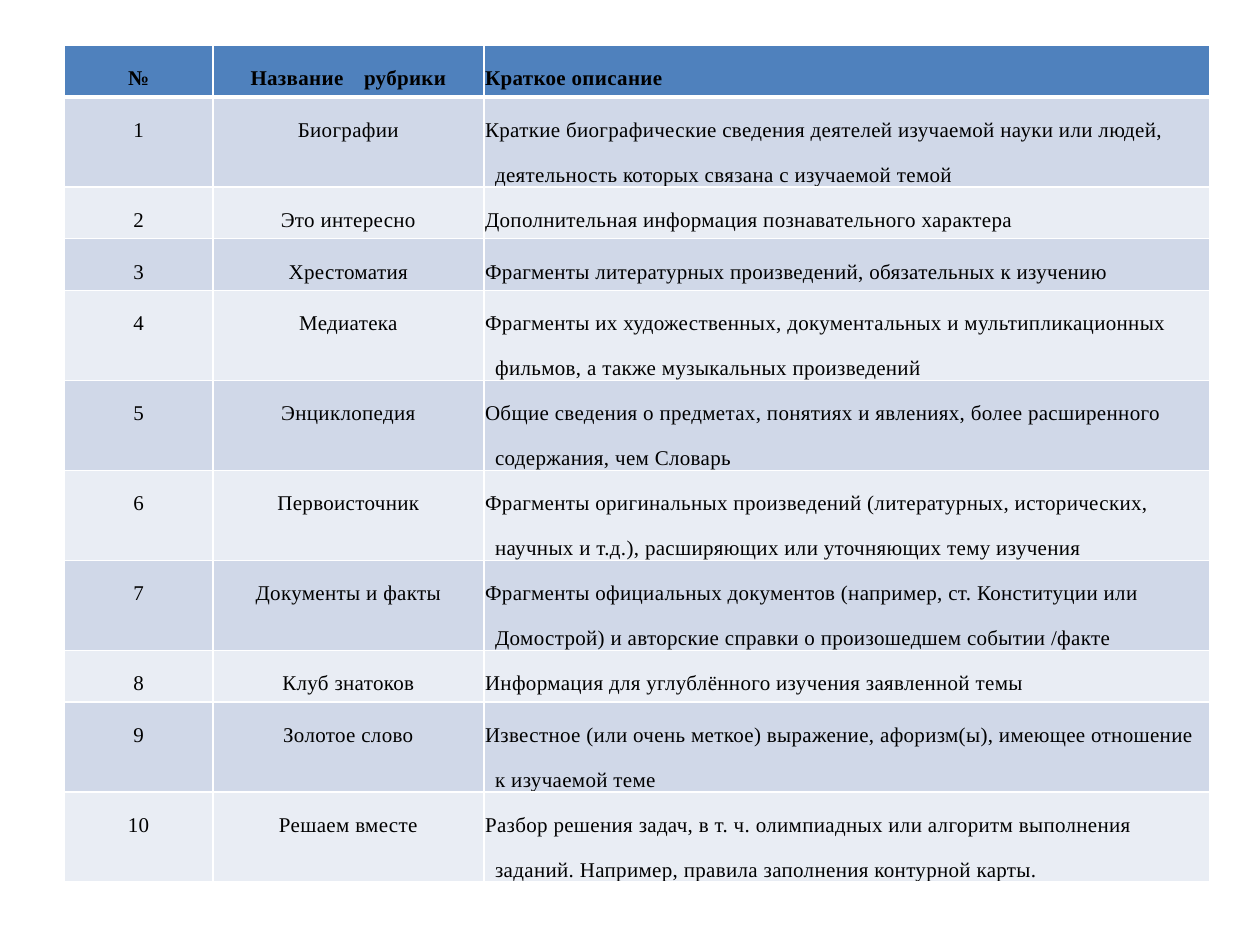
from lxml import etree
from pptx import Presentation
from pptx.dml.color import RGBColor
from pptx.enum.text import PP_ALIGN
from pptx.oxml.ns import qn
from pptx.util import Inches, Pt

CENTER, LEFT = PP_ALIGN.CENTER, PP_ALIGN.LEFT
COLORS = {"header": "4F81BD", "odd": "D0D8E8", "even": "E9EDF4",
          "text": "000000", "border": "FFFFFF"}
BODY_FONT, GAP_FONT = "Times New Roman", "Cabin"

HEADER = ("№", "Название рубрики", "Краткое описание")
RUBRICS = [
    ("Биографии", "Краткие биографические сведения деятелей изучаемой науки или людей, "
     "деятельность которых связана с изучаемой темой"),
    ("Это интересно", "Дополнительная информация познавательного характера"),
    ("Хрестоматия", "Фрагменты литературных произведений, обязательных к изучению"),
    ("Медиатека", "Фрагменты их художественных, документальных и мультипликационных "
     "фильмов, а также музыкальных произведений"),
    ("Энциклопедия", "Общие сведения о предметах, понятиях и явлениях, более расширенного "
     "содержания, чем Словарь"),
    ("Первоисточник", "Фрагменты оригинальных произведений (литературных, исторических, "
     "научных и т.д.), расширяющих или уточняющих тему изучения"),
    ("Документы и факты", "Фрагменты официальных документов (например, ст. Конституции или "
     "Домострой) и авторские справки о произошедшем событии /факте"),
    ("Клуб знатоков", "Информация для углублённого изучения заявленной темы"),
    ("Золотое слово", "Известное (или очень меткое) выражение, афоризм(ы), имеющее отношение "
     "к изучаемой теме"),
    ("Решаем вместе", "Разбор решения задач, в т. ч. олимпиадных или алгоритм выполнения "
     "заданий. Например, правила заполнения контурной карты."),
]
COLUMN_WIDTHS = (1.18, 2.15, 5.76)
ROW_HEIGHT = 0.41


def format_run(run, bold, font=BODY_FONT, size=12, spacing=20):
    run.font.name = font
    run.font.size = Pt(size)
    run.font.bold = bold
    run.font.color.rgb = RGBColor.from_string(COLORS["text"])
    run.font._element.set("spc", str(spacing))


def add_borders(cell, bottom_width, top_width):
    properties = cell._tc.get_or_add_tcPr()
    for side, width in (("L", 1), ("R", 1), ("T", top_width), ("B", bottom_width)):
        line = etree.SubElement(properties, qn(f"a:ln{side}"), w=str(Pt(width)))
        fill = etree.SubElement(line, qn("a:solidFill"))
        etree.SubElement(fill, qn("a:srgbClr"), val=COLORS["border"])


prs = Presentation()
prs.slide_width, prs.slide_height = Inches(10), Inches(7.5)
slide = prs.slides.add_slide(prs.slide_layouts[6])

# Table grid
rows = [HEADER] + [(str(number), *rubric) for number, rubric in enumerate(RUBRICS, 1)]
table = slide.shapes.add_table(
    len(rows), len(HEADER), Inches(0.51), Inches(0.36),
    Inches(sum(COLUMN_WIDTHS)), Inches(ROW_HEIGHT * len(rows))).table
for column, width in zip(table.columns, COLUMN_WIDTHS):
    column.width = Inches(width)

# Cells
for row_index, row in enumerate(rows):
    is_header = row_index == 0
    table.rows[row_index].height = Inches(ROW_HEIGHT)
    band = "header" if is_header else "odd" if row_index % 2 else "even"
    for column_index, text in enumerate(row):
        cell = table.cell(row_index, column_index)
        cell.margin_left = cell.margin_right = Inches(0.01)
        cell.margin_top = cell.margin_bottom = 0
        add_borders(cell, 3 if is_header else 1, 3 if row_index == 1 else 1)
        cell.fill.solid()
        cell.fill.fore_color.rgb = RGBColor.from_string(COLORS[band])

        paragraph = cell.text_frame.paragraphs[0]
        paragraph.text = text
        paragraph.alignment = LEFT if column_index == 2 else CENTER
        paragraph.line_spacing = Pt(25.7)
        paragraph.space_before = Pt(21)
        indents = paragraph._p.get_or_add_pPr()
        indents.set("marL", str(Inches(0.08)))
        indents.set("indent", str(Inches(-0.28)))
        format_run(paragraph.runs[0], is_header)

# Wide gap between the two words of the second heading
heading = table.cell(0, 1).text_frame.paragraphs[0]
first_word, last_word = HEADER[1].split()
heading.runs[0].text = first_word
gap = heading.add_run()
gap.text = " "
format_run(gap, True, GAP_FONT, 11, 900)
ending = heading.add_run()
ending.text = last_word
format_run(ending, True)

prs.save("out.pptx")
